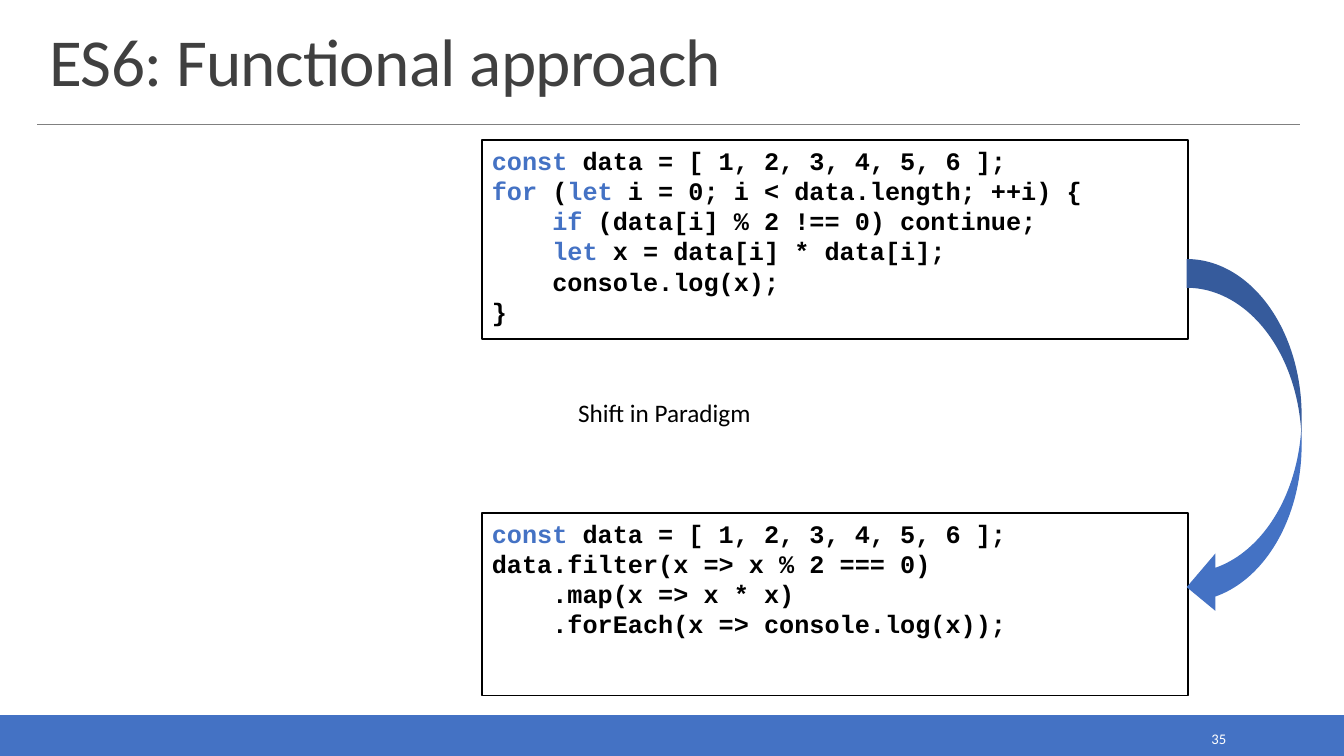
from lxml import etree
from pptx import Presentation
from pptx import util as u
from pptx.dml.color import RGBColor
from pptx.enum import shapes, text
from pptx.oxml.ns import qn

COLORS = {
    "accent": "4472C4",
    "title": "404040",
    "rule": "808080",
    "ink": "000000",
    "white": "FFFFFF",
}
LOOP_CODE = [
    (0, "|const| data = [ 1, 2, 3, 4, 5, 6 ];"),
    (0, "|for| (|let| i = 0; i < data.length; ++i) {"),
    (1, "|if| (data[i] % 2 !== 0) continue;"),
    (1, "|let| x = data[i] * data[i];"),
    (1, "console.log(x);"),
    (0, "}"),
]
FUNCTIONAL_CODE = [
    (0, "|const| data = [ 1, 2, 3, 4, 5, 6 ];"),
    (0, "data.filter(x => x % 2 === 0)"),
    (1, ".map(x => x * x)"),
    (1, ".forEach(x => console.log(x));"),
]
CODE_INDENT = 0.6


def rgb(name):
    return RGBColor.from_string(COLORS[name])


def inches(*box):
    return [u.Inches(v) for v in box]


def style(r, size, color, font="Calibri", bold=False):
    r.font.size = u.Pt(size)
    r.font.name = font
    r.font.bold = bold
    r.font.color.rgb = rgb(color)


def add_shape(s, kind, box, fill=None, line=None):
    sp = s.shapes.add_shape(kind, *inches(*box))
    sp.shadow.inherit = False
    if fill:
        sp.fill.solid()
        sp.fill.fore_color.rgb = rgb(fill)
    else:
        sp.fill.background()
    if line:
        sp.line.color.rgb = rgb(line)
        sp.line.width = u.Pt(1.25)
    else:
        sp.line.fill.background()
    return sp


def add_label(s, box, label, size, color, align, anchor):
    tf = s.shapes.add_textbox(*inches(*box)).text_frame
    tf.word_wrap = True
    tf.vertical_anchor = anchor
    tf.text = label
    p = tf.paragraphs[0]
    p.alignment = align
    style(p.runs[0], size, color)


def add_header(s, box, title):
    left, top, width, height = box
    sp = s.shapes.title
    sp.left, sp.top, sp.width, sp.height = inches(*box)
    tf = sp.text_frame
    tf.text = title
    tf.auto_size = text.MSO_AUTO_SIZE.NONE
    tf.vertical_anchor = text.MSO_ANCHOR.BOTTOM
    p = tf.paragraphs[0]
    p.alignment = text.PP_ALIGN.LEFT
    p.line_spacing = 0.85
    r = p.runs[0]
    style(r, 48, "title")
    r.font._element.set("spc", "-50")

    y = top + height + 0.19
    rule = s.shapes.add_connector(
        shapes.MSO_CONNECTOR.STRAIGHT,
        *inches(left - 0.02, y, left + width - 0.02, y))
    rule.line.color.rgb = rgb("rule")
    rule.line.width = u.Pt(0.5)
    etree.SubElement(rule._element.spPr, qn("a:effectLst"))


def add_footer(s, box, number):
    left, top, width, height = box
    add_shape(s, shapes.MSO_SHAPE.RECTANGLE, box, "accent", "accent")
    add_label(s, (left + width - 2.5, top + 0.09, 1.43, 0.28), number, 10.5,
              "white", text.PP_ALIGN.RIGHT, text.MSO_ANCHOR.MIDDLE)


def add_code(s, box, lines):
    sp = add_shape(s, shapes.MSO_SHAPE.RECTANGLE, box, line="ink")
    tf = sp.text_frame
    tf.vertical_anchor = text.MSO_ANCHOR.TOP
    for i, (level, line) in enumerate(lines):
        p = tf.paragraphs[0] if i == 0 else tf.add_paragraph()
        p.alignment = text.PP_ALIGN.LEFT
        indent = u.Inches(level * CODE_INDENT)
        p._p.get_or_add_pPr().set("marL", str(indent))
        for j, part in enumerate(line.split("|")):
            if part:
                r = p.add_run()
                r.text = part
                color = "accent" if j % 2 else "ink"
                style(r, 18, color, "Courier New", True)


def add_comparison(s, box):
    left, top, width, height = box
    code_width = 7
    add_code(s, (left, top, code_width, 1.97), LOOP_CODE)
    add_code(s, (left, top + height - 1.81, code_width, 1.81),
             FUNCTIONAL_CODE)
    add_shape(s, shapes.MSO_SHAPE.CURVED_LEFT_ARROW,
              (left + width - 1.14, top + 1.18, 1.14, 3.54), "accent")
    add_label(s, (left, top + 2.5, 3.62, 0.4), "Shift in Paradigm", 18,
              "ink", text.PP_ALIGN.CENTER, text.MSO_ANCHOR.TOP)


def main():
    prs = Presentation()
    prs.slide_width, prs.slide_height = inches(13.33, 7.5)
    s = prs.slides.add_slide(prs.slide_layouts[5])
    add_footer(s, (0, 7.1, 13.33, 0.4), "35")
    add_header(s, (0.39, 0.2, 12.52, 0.84), "ES6: Functional approach")
    add_comparison(s, (4.78, 1.39, 8.13, 5.51))
    prs.save("out.pptx")


if __name__ == "__main__":
    main()
